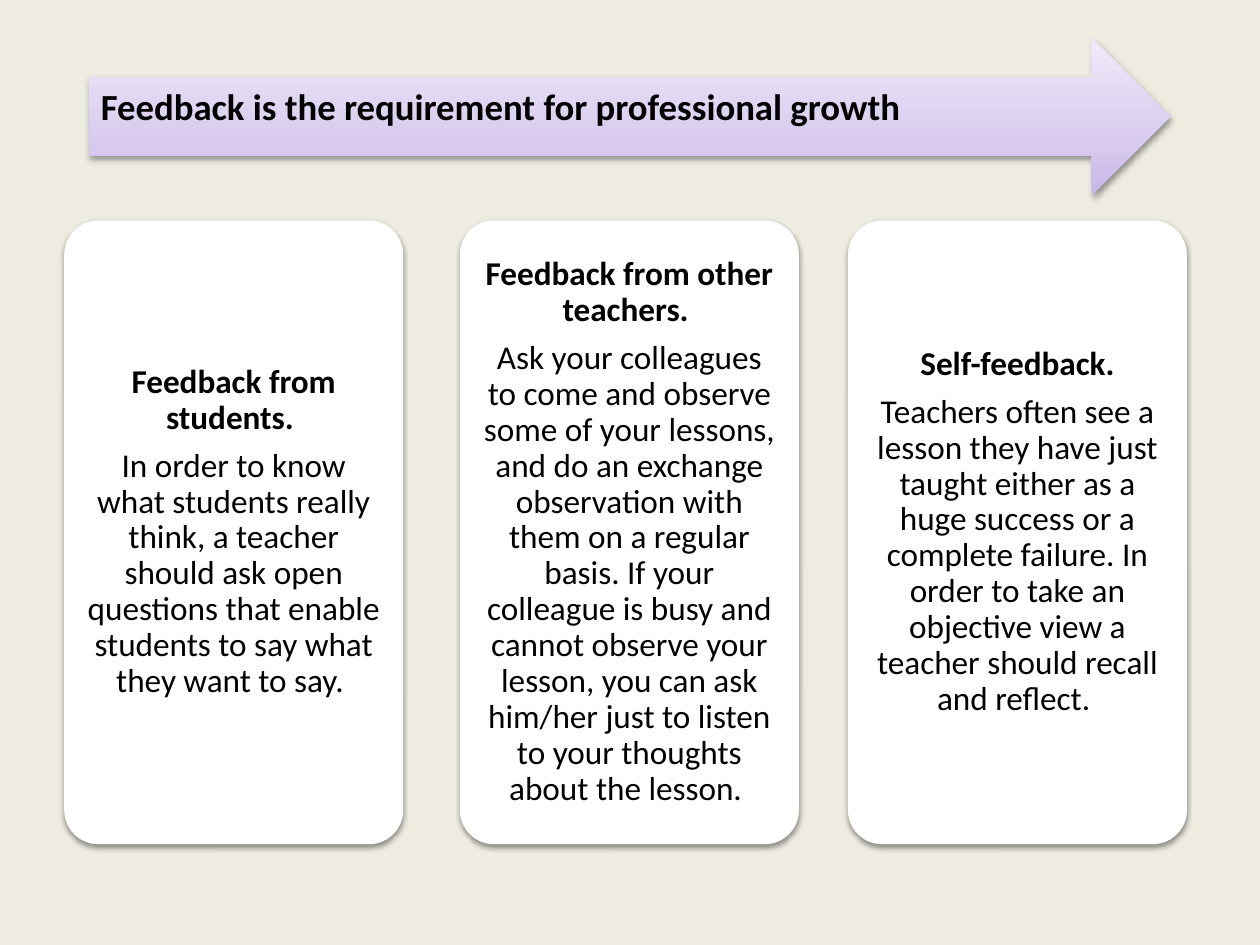
from lxml import etree
from pptx import Presentation
from pptx import util as u
from pptx.dml.color import RGBColor
from pptx.enum import shapes, text
from pptx.oxml import parse_xml
from pptx.oxml.ns import nsdecls, qn

TITLE = "Feedback is the requirement for professional growth"
CARDS = [  # left edge, heading, body
    (0.51, "Feedback from students. ",
     "In order to know what students really think, a teacher should ask open "
     "questions that enable students to say what they want to say. "),
    (3.65, "Feedback from other teachers. ",
     "Ask your colleagues to come and observe some of your lessons, and do an "
     "exchange observation with them on a regular basis. If your colleague is "
     "busy and cannot observe your lesson, you can ask him/her just to listen "
     "to your thoughts about the lesson. "),
    (6.73, "Self-feedback.",
     "Teachers often see a lesson they have just taught either as a huge "
     "success or a complete failure. In order to take an objective view a "
     "teacher should recall and reflect. "),
]
CARD_TOP, CARD_W, CARD_H = 1.75, 2.69, 4.95
ARROW = (0.71, 0.3, 8.58, 1.25)
TITLE_BOX = (0.71, 0.61, 8.27, 0.62)
COLORS = {"background": "EEECE1", "card": "FFFFFF", "text": "000000", "shadow": "000000"}
ARROW_STOPS = [(0, "C9B5E8"), (35, "D8CBEE"), (100, "F0EAF9")]
FONT = "Calibri"


def rgb(name):
    return RGBColor.from_string(COLORS[name])


def add_shape(s, kind, box):
    """Add an outline-free shape with a soft shadow below it."""
    sp = s.shapes.add_shape(kind, *map(u.Inches, box))
    sp.line.fill.background()
    sp.shadow.inherit = False
    effects = sp._element.spPr.find(qn("a:effectLst"))
    shadow = etree.SubElement(effects, qn("a:outerShdw"), blurRad="40000",
                              dist="20000", dir="5400000", rotWithShape="0")
    color = etree.SubElement(shadow, qn("a:srgbClr"), val=COLORS["shadow"])
    etree.SubElement(color, qn("a:alpha"), val="38000")
    return sp


def fill_gradient(sp, stops):
    """Fill from bottom to top through (percent, colour) stops."""
    gs = "".join(f'<a:gs pos="{pos * 1000}"><a:srgbClr val="{color}"/></a:gs>'
                 for pos, color in stops)
    grad = parse_xml(f'<a:gradFill {nsdecls("a")} rotWithShape="1"><a:gsLst>{gs}</a:gsLst>'
                     '<a:lin ang="16200000" scaled="0"/></a:gradFill>')
    sp._element.spPr.find(qn("a:prstGeom")).addnext(grad)


def set_text(sp, lines, size, align, insets):
    """Write (text, bold) lines, one paragraph each, centred vertically."""
    tf = sp.text_frame
    tf.word_wrap = True
    tf.auto_size = text.MSO_AUTO_SIZE.NONE
    tf.vertical_anchor = text.MSO_ANCHOR.MIDDLE
    tf.margin_left, tf.margin_top, tf.margin_right, tf.margin_bottom = map(u.Inches, insets)
    for i, (line, bold) in enumerate(lines):
        p = tf.add_paragraph() if i else tf.paragraphs[0]
        p.text = line
        p.alignment = align
        p.line_spacing = 0.9
        p.space_before = u.Pt(0)
        p.space_after = u.Pt(size * 0.35)
        p.font.name, p.font.size, p.font.bold = FONT, u.Pt(size), bold
        p.font.color.rgb = rgb("text")


def main():
    prs = Presentation()
    prs.slide_width, prs.slide_height = u.Inches(10), u.Inches(7.5)
    s = prs.slides.add_slide(prs.slide_layouts[5])
    s.background.fill.solid()
    s.background.fill.fore_color.rgb = rgb("background")

    arrow = add_shape(s, shapes.MSO_SHAPE.RIGHT_ARROW, ARROW)
    fill_gradient(arrow, ARROW_STOPS)

    title = s.shapes.title
    title.left, title.top, title.width, title.height = map(u.Inches, TITLE_BOX)
    set_text(title, [(TITLE, True)], 21, text.PP_ALIGN.LEFT, (0.09, 0.09, 0.28, 0.2))
    arrow._element.addnext(title._element)  # title in front of the arrow

    for left, heading, body in CARDS:
        card = add_shape(s, shapes.MSO_SHAPE.ROUNDED_RECTANGLE,
                         (left, CARD_TOP, CARD_W, CARD_H))
        card.adjustments[0] = 0.1
        card.fill.solid()
        card.fill.fore_color.rgb = rgb("card")
        set_text(card, [(heading, True), (body, False)], 19,
                 text.PP_ALIGN.CENTER, (0.08,) * 4)

    prs.save("out.pptx")


if __name__ == "__main__":
    main()
